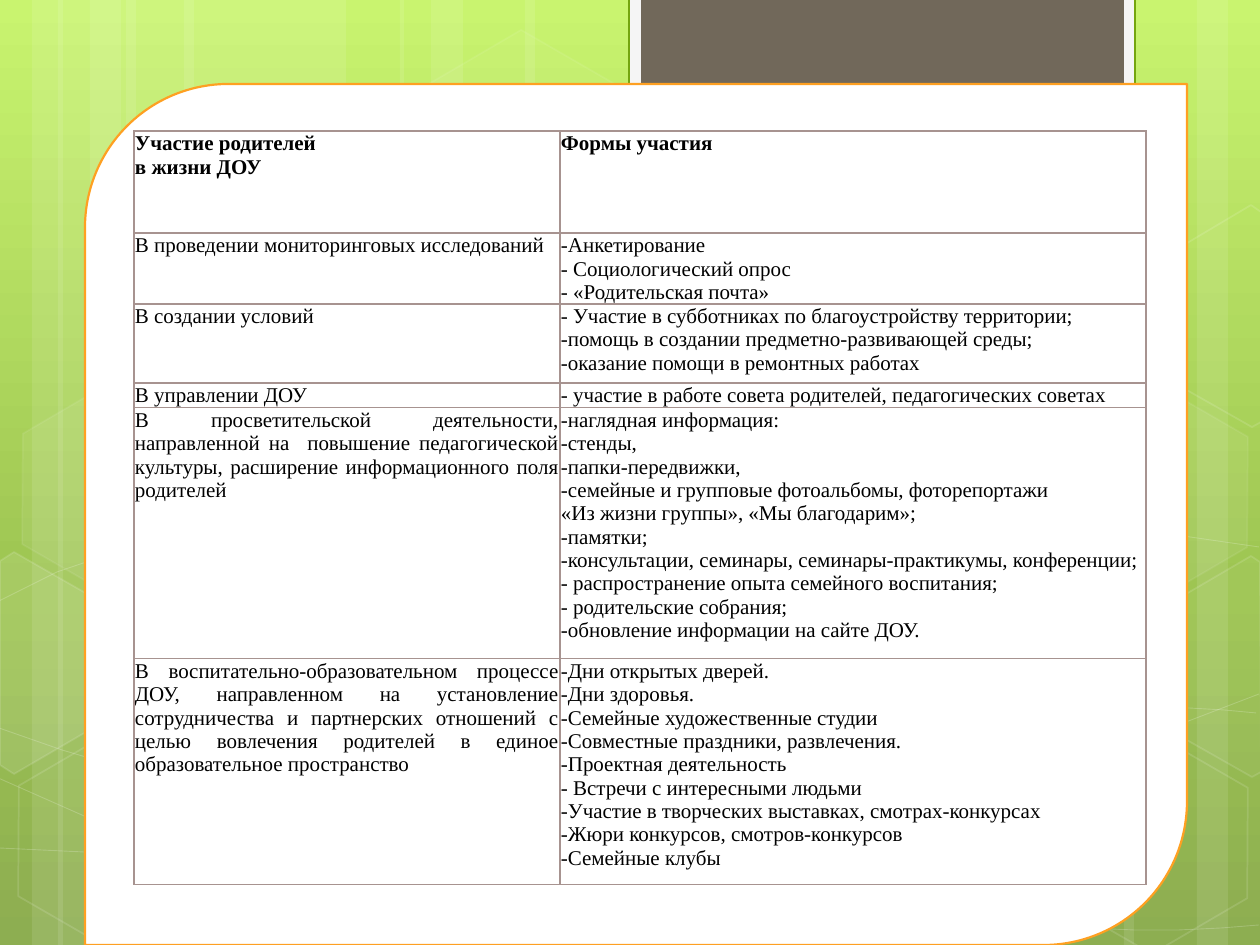
from copy import deepcopy

from lxml import etree
from pptx import Presentation
from pptx import util as u
from pptx.dml.color import RGBColor
from pptx.enum import shapes, text
from pptx.oxml.ns import qn

PX = 914400 / 126
W, H = 1260, 945
FONT = "Times New Roman"
WHITE = "FFFFFF"
BORDER = "A79390"
STRIPES = [(126, 220), (0, 63), (32, 104), (184, 220), (58, 63), (90, 104),
           (914, 220), (1197, 63), (1124, 104), (525, 388), (400, 63), (431, 104)]
WAVES = [
    [(-1, 848), (67, 852), (135, 856), (229, 854), (324, 853), (440, 851), (566, 838),
     (693, 825), (872, 801), (987, 777), (1103, 753), (1220, 716), (1259, 694)],
    [(-1, 601), (34, 581), (71, 563), (142, 543), (214, 523), (315, 496), (427, 488),
     (539, 479), (674, 478), (813, 488), (951, 498), (1183, 537), (1259, 547)],
    [(-4, 777), (149, 847), (301, 916), (411, 944)],
    [(-1, 728), (38, 742), (77, 756), (150, 776), (224, 795), (334, 827), (438, 848),
     (543, 869), (677, 892), (780, 905), (885, 919), (997, 924), (1063, 927),
     (1130, 932), (1148, 930), (1179, 930), (1212, 929), (1235, 927), (1259, 925)],
    [(295, 944), (318, 919), (339, 893), (370, 871), (400, 848), (442, 823), (478, 805),
     (513, 787), (534, 780), (581, 767), (627, 755), (712, 737), (756, 728),
     (800, 720), (806, 720), (845, 717), (885, 713), (946, 709), (990, 708),
     (1033, 707), (1106, 708), (1189, 708), (1213, 709), (1235, 711), (1256, 713)],
]
HEXAGONS = [(411, 45, 4, 8), (4, 745, None, 12), (8, 393, 7, 8),
            (1041, 747, None, 12), (1041, 396, 7, 8)]
CUT_HEXAGONS = [
    ([(0, 561), (14, 552), (110, 607), (110, 718), (14, 774), (0, 765)], 10),
    ([(1157, 611), (1251, 556), (1260, 562), (1261, 772), (1252, 777), (1155, 722)], 4),
    ([(1157, 261), (1251, 205), (1261, 212), (1261, 422), (1252, 427), (1155, 372)], None),
]
COLS = [426, 586]
ROW_HEIGHTS = [102, 71, 79, 25, 251, 226]
ROWS = [
    (["Участие родителей", "в жизни ДОУ"], ["Формы участия"]),
    (["В проведении мониторинговых исследований"],
     ["-Анкетирование", "- Социологический опрос", "- «Родительская почта»"]),
    (["В создании условий"],
     ["- Участие в субботниках по благоустройству территории;",
      "-помощь в создании предметно-развивающей среды;",
      "-оказание помощи в ремонтных работах"]),
    (["В управлении ДОУ"],
     ["- участие в работе совета родителей, педагогических советах"]),
    (["В просветительской деятельности, направленной на  повышение педагогической "
      "культуры, расширение информационного поля родителей"],
     ["-наглядная информация:", "-стенды,", "-папки-передвижки,",
      "-семейные и групповые фотоальбомы, фоторепортажи",
      "«Из жизни группы», «Мы благодарим»;", "-памятки;",
      "-консультации, семинары, семинары-практикумы, конференции;",
      "- распространение опыта семейного воспитания;",
      "- родительские собрания;", "-обновление информации на сайте ДОУ."]),
    (["В воспитательно-образовательном процессе ДОУ, направленном на установление "
      "сотрудничества и партнерских отношений с целью вовлечения родителей в единое "
      "образовательное пространство"],
     ["-Дни открытых дверей.", "•Дни здоровья.", "•Семейные художественные студии",
      "•Совместные праздники, развлечения.", "•Проектная деятельность",
      "- Встречи с интересными людьми",
      "-Участие в творческих выставках, смотрах-конкурсах",
      "•Жюри конкурсов, смотров-конкурсов", "•Семейные клубы"]),
]


def px(n):
    return u.Emu(round(n * PX))


def rgb(color):
    return RGBColor.from_string(color)


def set_alpha(parent, percent):
    clr = parent.find(qn("a:solidFill")).find(qn("a:srgbClr"))
    etree.SubElement(clr, qn("a:alpha")).set("val", str(percent * 1000))


def paint(sp, fill=None, alpha=100, line=None, width=1, line_alpha=100):
    sp.shadow.inherit = False
    sp_pr = sp._element.spPr
    if fill:
        sp.fill.solid()
        sp.fill.fore_color.rgb = rgb(fill)
        set_alpha(sp_pr, alpha)
    else:
        sp.fill.background()
    if line:
        sp.line.color.rgb = rgb(line)
        sp.line.width = u.Pt(width)
        set_alpha(sp_pr.find(qn("a:ln")), line_alpha)
    else:
        sp.line.fill.background()


def add_box(s, kind, box, **style):
    sp = s.shapes.add_shape(kind, *map(px, box))
    paint(sp, **style)
    return sp


def add_outline(s, points, close, **style):
    builder = s.shapes.build_freeform(*points[0], scale=PX)
    builder.add_line_segments(points[1:], close=close)
    paint(builder.convert_to_shape(), **style)


def sample_curve(knots, steps=2):
    points = [knots[0]]
    for i in range(0, len(knots) - 1, 3):
        a, b, c, d = knots[i:i + 4]
        for k in range(1, steps + 1):
            t = k / steps
            q = 1 - t
            points.append(tuple(round(q**3 * e + 3 * q * q * t * f + 3 * q * t * t * g + t**3 * h)
                                for e, f, g, h in zip(a, b, c, d)))
    return points


def add_background(s):
    fill = s.background.fill
    fill.gradient()
    fill.gradient_angle = 270
    gs_lst = s._element.find(".//" + qn("a:gsLst"))
    gs_lst.append(deepcopy(gs_lst[-1]))
    for stop, (pos, color) in zip(fill.gradient_stops,
                                  [(0, "C3F35F"), (0.62, "93BF3F"), (1, "81A53E")]):
        stop.position = pos
        stop.color.rgb = rgb(color)


def add_decor(s):
    kinds = shapes.MSO_SHAPE
    for x, w in STRIPES:
        add_box(s, kinds.RECTANGLE, (x, 0, w, H), fill=WHITE, alpha=10)
    for knots in WAVES:
        add_outline(s, sample_curve(knots), False, line=WHITE, width=0.5, line_alpha=20)
    for x, y, alpha, line_alpha in HEXAGONS:
        sp = add_box(s, kinds.HEXAGON, (x, y, 221, 192), fill=alpha and WHITE,
                     alpha=alpha, line=WHITE, line_alpha=line_alpha)
        sp.adjustments[0] = 0.285
        sp.rotation = 30
    for points, alpha in CUT_HEXAGONS:
        add_outline(s, points, True, fill=alpha and WHITE, alpha=alpha,
                    line=WHITE, line_alpha=12)


def add_card(s, x, y, w, h):
    kinds = shapes.MSO_SHAPE
    add_box(s, kinds.RECTANGLE, (x + 544, -3, 506, 864), fill="F5F5F5",
            line="74A510", width=1.25)
    add_box(s, kinds.RECTANGLE, (x + 556, -3, 483, 319), fill="71685A")
    add_box(s, kinds.ROUND_2_DIAG_RECTANGLE, (x, y, w, h), fill=WHITE,
            line="FEA022", width=1.25)


def write(p, words, size=12, bold=False, color="000000", align=None, bullet=None):
    p.alignment = align
    if bullet:
        p_pr = p._p.get_or_add_pPr()
        etree.SubElement(p_pr, qn("a:buFont")).set("typeface", FONT)
        etree.SubElement(p_pr, qn("a:buChar")).set("char", bullet)
    r = p.add_run()
    r.text = words
    r.font.name = FONT
    r.font.size = u.Pt(size)
    r.font.bold = bold
    r.font.color.rgb = rgb(color)


def format_cell(cell):
    cell.margin_left = cell.margin_right = cell.margin_top = px(1)
    cell.margin_bottom = 0
    tc_pr = cell._tc.get_or_add_tcPr()
    for side in "LRTB":
        ln = etree.SubElement(tc_pr, qn("a:ln" + side), w=str(u.Pt(0.75)))
        solid = etree.SubElement(ln, qn("a:solidFill"))
        etree.SubElement(solid, qn("a:srgbClr"), val=BORDER)
    cell.fill.background()


def add_participation_table(s, x, y):
    box = map(px, (x, y, sum(COLS), sum(ROW_HEIGHTS)))
    table = s.shapes.add_table(len(ROWS), len(COLS), *box).table
    table.first_row = table.horz_banding = False
    for col, w in zip(table.columns, COLS):
        col.width = px(w)
    for i, (row, h) in enumerate(zip(table.rows, ROW_HEIGHTS)):
        row.height = px(h)
        for cell, lines in zip(row.cells, ROWS[i]):
            format_cell(cell)
            tf = cell.text_frame
            for k, words in enumerate(lines):
                p = tf.paragraphs[0] if k == 0 else tf.add_paragraph()
                write(p, words.lstrip("•"), bold=i == 0, align=text.PP_ALIGN.JUSTIFY,
                      bullet="-" if words.startswith("•") else None)


def main():
    prs = Presentation()
    prs.slide_width, prs.slide_height = px(W), px(H)
    s = prs.slides.add_slide(prs.slide_layouts[6])
    add_background(s)
    add_decor(s)
    add_card(s, 85, 84, 1102, 861)
    add_participation_table(s, 134, 131)
    prs.save("out.pptx")


if __name__ == "__main__":
    main()
